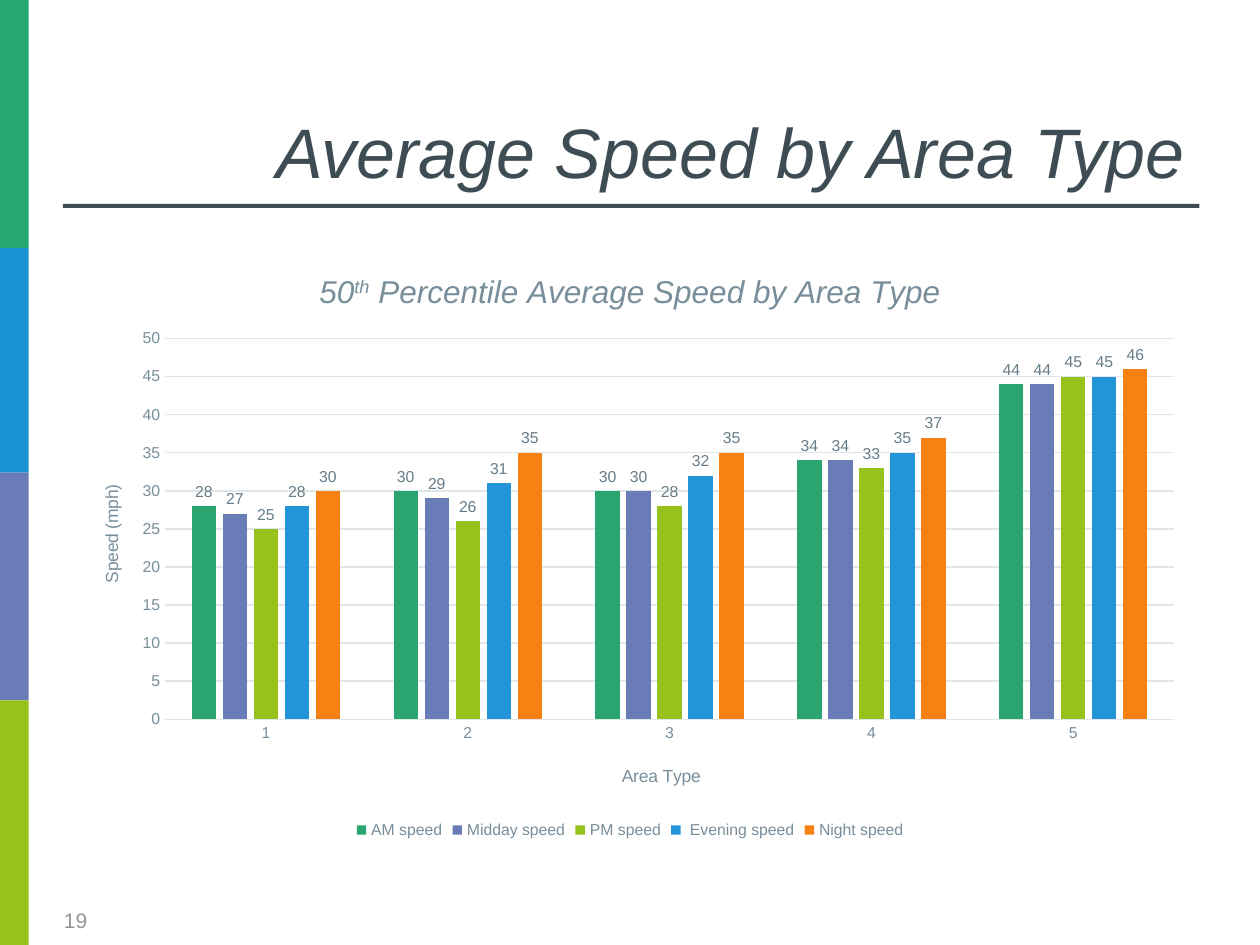
import pptx
import pptx.chart.data
import pptx.dml.color
import pptx.enum.chart
import pptx.enum.shapes
import pptx.enum.text
import pptx.util
from lxml import etree
from pptx.oxml.ns import qn

Cm, Pt = pptx.util.Cm, pptx.util.Pt
XL = pptx.enum.chart
ANCHOR, ALIGN = pptx.enum.text.MSO_ANCHOR, pptx.enum.text.PP_ALIGN

# Content
TITLE = "Average Speed by Area Type"
PAGE = "19"
CHART_TITLE = [("50", False), ("th", True), (" Percentile Average Speed by Area Type", False)]
AREA_TYPES = ["1", "2", "3", "4", "5"]
SERIES = [
    ("AM speed", (28, 30, 30, 34, 44), "2BA570"),
    ("Midday speed", (27, 29, 30, 34, 44), "6A7CB8"),
    ("PM speed", (25, 26, 28, 33, 45), "97C21C"),
    (" Evening speed", (28, 31, 32, 35, 45), "2494D8"),
    ("Night speed", (30, 35, 35, 37, 46), "F88113"),
]
STRIPES = [("26A871", 5), ("1C93D2", 4.53), ("6A7CB8", 4.59), ("97C31C", 4.93)]  # colour, height
DARK, GREY, GRID = "3F4D55", "788E9B", "E0E5E8"


def rgb(value):
    return pptx.dml.color.RGBColor.from_string(value)


def style(font, size, color, italic=False):
    font.name, font.size, font.italic, font.bold = "Arial", Pt(size), italic, False
    font.color.rgb = rgb(color)


def add_bar(s, left, top, width, height, color):
    sp = s.shapes.add_shape(pptx.enum.shapes.MSO_SHAPE.RECTANGLE,
                            Cm(left), Cm(top), Cm(width), Cm(height))
    sp.shadow.inherit = False
    sp.fill.solid()
    sp.fill.fore_color.rgb = rgb(color)
    sp.line.fill.background()


def add_text(s, text, box, size, color, anchor, align, italic=False):
    tf = s.shapes.add_textbox(*map(Cm, box)).text_frame
    tf.word_wrap = True
    tf.vertical_anchor = anchor
    tf.text = text
    p = tf.paragraphs[0]
    p.alignment = align
    style(p.runs[0].font, size, color, italic)


def place(element, index, **fractions):
    """Set a manual layout, as fractions of the chart area."""
    for old in element.findall(qn("c:layout")):
        element.remove(old)
    layout = etree.Element(qn("c:layout"))
    manual = etree.SubElement(layout, qn("c:manualLayout"))
    if "w" in fractions:
        etree.SubElement(manual, qn("c:layoutTarget")).set("val", "inner")
    for key in ("x", "y"):
        etree.SubElement(manual, qn(f"c:{key}Mode")).set("val", "edge")
    for key, value in fractions.items():
        etree.SubElement(manual, qn(f"c:{key}")).set("val", str(value))
    element.insert(index, layout)


def style_axis(axis, title, x, y):
    axis.major_tick_mark = axis.minor_tick_mark = XL.XL_TICK_MARK.NONE
    style(axis.tick_labels.font, 9, GREY)
    tf = axis.axis_title.text_frame
    tf.text = title
    style(tf.paragraphs[0].runs[0].font, 10, GREY)
    place(axis.axis_title._element, 1, x=x, y=y)


def grid_line(line):
    line.color.rgb = rgb(GRID)
    line.width = Pt(0.75)


def add_speed_chart(s):
    data = pptx.chart.data.CategoryChartData(number_format="0")
    data.categories = AREA_TYPES
    for name, values, _ in SERIES:
        data.add_series(name, values)
    chart = s.shapes.add_chart(XL.XL_CHART_TYPE.COLUMN_CLUSTERED, Cm(1.27), Cm(5.03),
                               Cm(22.86), Cm(11.99), data).chart
    style(chart.font, 10, DARK)

    # Chart title with a raised ordinal
    p = chart.chart_title.text_frame.paragraphs[0]
    for text, raised in CHART_TITLE:
        r = p.add_run()
        r.text = text
        style(r.font, 18, GREY, True)
        if raised:
            r._r.get_or_add_rPr().set("baseline", "30000")
    chart.chart_title.include_in_layout = False

    # Axes
    cat, val = chart.category_axis, chart.value_axis
    style_axis(cat, "Area Type", 0.49, 0.86)
    style_axis(val, "Speed (mph)", 0.03, 0.39)
    grid_line(cat.format.line)
    grid_line(val.major_gridlines.format.line)
    val.format.line.fill.background()
    val.minimum_scale, val.maximum_scale, val.major_unit = 0, 50, 5
    val.tick_labels.number_format = "0"
    val.tick_labels.number_format_is_linked = False

    # Columns and their labels
    plot = chart.plots[0]
    plot.gap_width, plot.overlap, plot.vary_by_categories = 219, -27, False
    for series, (_, _, color) in zip(plot.series, SERIES):
        series.format.fill.solid()
        series.format.fill.fore_color.rgb = rgb(color)
        labels = series.data_labels
        labels.show_value = True
        labels.position = XL.XL_LABEL_POSITION.OUTSIDE_END
        labels.number_format, labels.number_format_is_linked = "0", False
        style(labels.font, 9, "667C89")

    # Legend and plot area
    chart.has_legend = True
    chart.legend.position = XL.XL_LEGEND_POSITION.BOTTOM
    chart.legend.include_in_layout = False
    style(chart.legend.font, 9, GREY)
    place(chart._chartSpace.chart.plotArea, 0, x=0.09, y=0.15, w=0.89, h=0.64)


def main():
    prs = pptx.Presentation()
    prs.slide_width, prs.slide_height = Cm(25.4), Cm(19.05)
    s = prs.slides.add_slide(prs.slide_layouts[6])

    # Side stripes and rule under the title
    top = 0
    for color, height in STRIPES:
        add_bar(s, 0, top, 0.58, height, color)
        top += height
    add_bar(s, 1.27, 4.11, 22.91, 0.08, DARK)

    add_text(s, TITLE, (1.27, 0, 22.86, 4.01), 40, "3E4D54", ANCHOR.BOTTOM, ALIGN.RIGHT, True)
    add_text(s, PAGE, (1.04, 18.03, 1.85, 1.02), 12, "939799", ANCHOR.MIDDLE, ALIGN.LEFT)
    add_speed_chart(s)
    prs.save("out.pptx")


if __name__ == "__main__":
    main()
